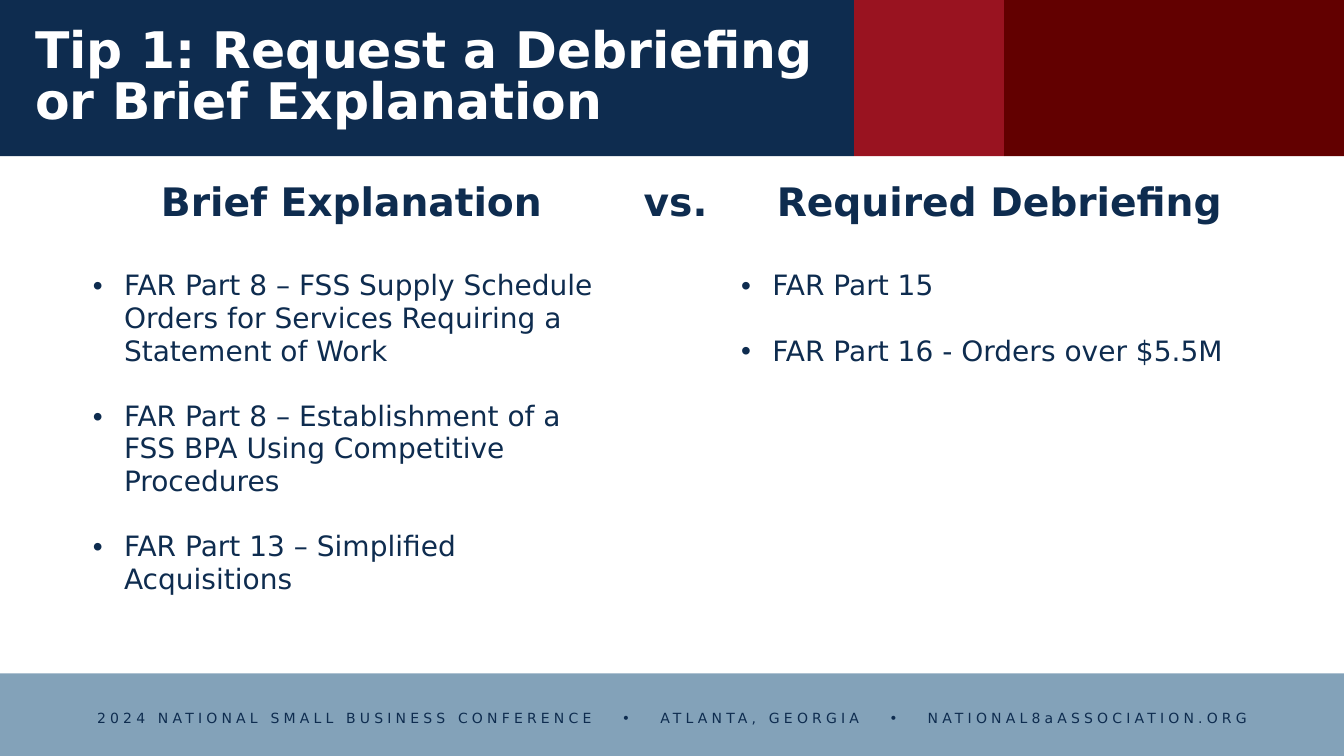
from lxml import etree
from pptx import Presentation
from pptx import util as u
from pptx.dml.color import RGBColor
from pptx.enum import shapes, text
from pptx.oxml.ns import qn

FONT = "DejaVu Sans"
NAVY, WHITE = "0E2C4F", "FFFFFF"
CENTER = text.PP_ALIGN.CENTER
LEFT = text.PP_ALIGN.LEFT


def paint(fill, color):
    fill.solid()
    fill.fore_color.rgb = RGBColor.from_string(color)


def bar(slide, x, y, w, h, color):
    rect = slide.shapes.add_shape(
        shapes.MSO_SHAPE.RECTANGLE, *map(u.Inches, (x, y, w, h)))
    rect.shadow.inherit = False
    paint(rect.fill, color)
    rect.line.fill.background()


def write(para, words, size=20, color=NAVY, bold=False, align=LEFT,
          track=0, bullet=False):
    para.alignment = align
    if bullet:
        props = para._p.get_or_add_pPr()
        props.set("marL", str(u.Inches(0.31)))
        props.set("indent", str(-u.Inches(0.31)))
        etree.SubElement(props, qn("a:buFont"), typeface="Arial")
        etree.SubElement(props, qn("a:buChar"), char="•")
    run = para.add_run()
    run.text = words
    font = run.font
    font.name, font.size, font.bold = FONT, u.Pt(size), bold
    font.color.rgb = RGBColor.from_string(color)
    if track:
        run._r.get_or_add_rPr().set("spc", str(round(track * 100)))


def frame(slide, x, y, w, h):
    box = slide.shapes.add_textbox(*map(u.Inches, (x, y, w, h)))
    box.text_frame.word_wrap = True
    return box.text_frame


def header(slide, x, y, h, title):
    left = x
    for w, color in ((8.47, NAVY), (1.49, "991320"), (3.37, "620000")):
        bar(slide, left, y, w, h, color)
        left += w
    body = frame(slide, x + 0.25, y + 0.46, 8.36, 0.64)
    body.vertical_anchor = text.MSO_ANCHOR.MIDDLE
    para = body.paragraphs[0]
    para.line_spacing = 0.85
    write(para, title, size=36, color=WHITE, bold=True)


def footer(slide, x, y, w, h, parts):
    bar(slide, x, y, w, h, "83A2B9")
    para = frame(slide, x, y + 0.31, w, 0.27).paragraphs[0]
    for i, part in enumerate(parts):
        if i:
            write(para, " ", size=10, align=CENTER, track=15.4)
            write(para, "• ", size=10, align=CENTER, track=9.2)
        write(para, part, size=10, align=CENTER, track=3)


def points(cell, items):
    cell.margin_top = u.Inches(0.37)
    body = cell.text_frame
    for i, item in enumerate(items):
        para = body.add_paragraph() if i else body.paragraphs[0]
        if i:
            para.space_before = u.Pt(23.3)
        write(para, item, bullet=True)


def versus(slide, x, y, w, h, heads, lists):
    grid = slide.shapes.add_table(
        4, 3, *map(u.Inches, (x, y, w, h))).table
    grid.first_row = grid.horz_banding = False
    for col, wide in zip(grid.columns, (5.33, 1.1, 5.32)):
        col.width = u.Inches(wide)
    top = 0.55
    for i, row in enumerate(grid.rows):
        row.height = u.Inches((h - top) / 3 if i else top)
    for cell in grid.iter_cells():
        paint(cell.fill, WHITE)
    for i, head in enumerate(heads):
        write(grid.cell(0, i).text_frame.paragraphs[0], head,
              size=28, bold=True, align=CENTER)
    for col, items in zip((0, 2), lists):
        grid.cell(1, col).merge(grid.cell(3, col))
        points(grid.cell(1, col), items)


def main():
    deck = Presentation()
    deck.slide_width, deck.slide_height = u.Inches(13.33), u.Inches(7.5)
    slide = deck.slides.add_slide(deck.slide_layouts[6])
    header(slide, 0, 0, 1.55,
           "Tip 1: Request a Debriefing or Brief Explanation")
    footer(slide, 0, 6.68, 13.33, 0.82,
           ("2024 NATIONAL SMALL BUSINESS CONFERENCE",
            "ATLANTA, GEORGIA", "NATIONAL8aASSOCIATION.ORG"))
    versus(slide, 0.82, 1.74, 11.75, 4.33,
           ("Brief Explanation", "vs.", "Required Debriefing"),
           (("FAR Part 8 – FSS Supply Schedule Orders for Services "
             "Requiring a Statement of Work",
             "FAR Part 8 – Establishment of a FSS BPA Using "
             "Competitive Procedures",
             "FAR Part 13 – Simplified Acquisitions"),
            ("FAR Part 15", "FAR Part 16 - Orders over $5.5M")))
    deck.save("out.pptx")


if __name__ == "__main__":
    main()
